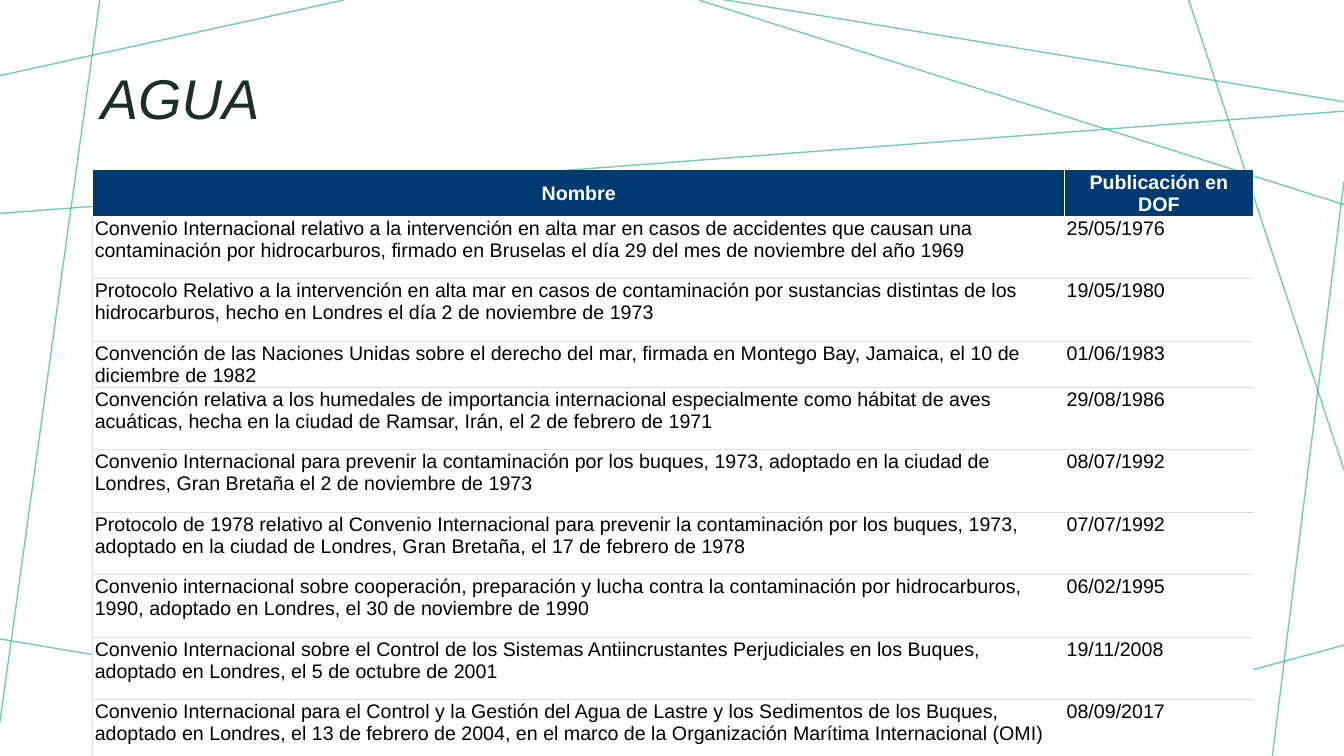
from lxml import etree
from pptx import Presentation
from pptx.dml.color import RGBColor
from pptx.enum.shapes import MSO_CONNECTOR
from pptx.enum.text import MSO_ANCHOR, MSO_AUTO_SIZE, PP_ALIGN
from pptx.oxml.ns import qn
from pptx.util import Inches, Pt

STRAIGHT = MSO_CONNECTOR.STRAIGHT
TOP, MIDDLE = MSO_ANCHOR.TOP, MSO_ANCHOR.MIDDLE
LEFT, CENTER = PP_ALIGN.LEFT, PP_ALIGN.CENTER
NO_AUTOFIT = MSO_AUTO_SIZE.NONE

GREEN, DARK_GREEN, NAVY = "37B598", "1B302B", "003A70"
WHITE, BLACK, GRAY = "FFFFFF", "000000", "DDDDDD"

BACKGROUND_LINES = [
    (3.41, 0, 0, 0.75),
    (0.99, 0, 0, 7.16),
    (6.83, 7.5, -0.05, 6.33),
    (13.33, 6.4, 9.26, 7.5),
    (13.33, 1.8, 12.62, 7.5),
    (13.33, 4.66, 11.79, 0),
    (13.33, 1.01, 7.14, -0.01),
    (6.93, 0, 13.33, 2.03),
    (-0.03, 2.12, 13.36, 1.1),
]

TREATIES = [
    ("Nombre", "Publicación en DOF"),
    ("Convenio Internacional relativo a la intervención en alta mar en casos de accidentes que causan una "
     "contaminación por hidrocarburos, firmado en Bruselas el día 29 del mes de noviembre del año 1969",
     "25/05/1976"),
    ("Protocolo Relativo a la intervención en alta mar en casos de contaminación por sustancias distintas de los "
     "hidrocarburos, hecho en Londres el día 2 de noviembre de 1973",
     "19/05/1980"),
    ("Convención de las Naciones Unidas sobre el derecho del mar, firmada en Montego Bay, Jamaica, el 10 de "
     "diciembre de 1982",
     "01/06/1983"),
    ("Convención relativa a los humedales de importancia internacional especialmente como hábitat de aves "
     "acuáticas, hecha en la ciudad de Ramsar, Irán, el 2 de febrero de 1971",
     "29/08/1986"),
    ("Convenio Internacional para prevenir la contaminación por los buques, 1973, adoptado en la ciudad de "
     "Londres, Gran Bretaña el 2 de noviembre de 1973",
     "08/07/1992"),
    ("Protocolo de 1978 relativo al Convenio Internacional para prevenir la contaminación por los buques, 1973, "
     "adoptado en la ciudad de Londres, Gran Bretaña, el 17 de febrero de 1978",
     "07/07/1992"),
    ("Convenio internacional sobre cooperación, preparación y lucha contra la contaminación por hidrocarburos, "
     "1990, adoptado en Londres, el 30 de noviembre de 1990",
     "06/02/1995"),
    ("Convenio Internacional sobre el Control de los Sistemas Antiincrustantes Perjudiciales en los Buques, "
     "adoptado en Londres, el 5 de octubre de 2001",
     "19/11/2008"),
    ("Convenio Internacional para el Control y la Gestión del Agua de Lastre y los Sedimentos de los Buques, "
     "adoptado en Londres, el 13 de febrero de 2004, en el marco de la Organización Marítima Internacional (OMI)",
     "08/09/2017"),
]
SHORT_ROWS = (0, 3)


def rgb(value):
    return RGBColor.from_string(value)


def set_borders(cell, colors):
    properties = cell._tc.get_or_add_tcPr()
    for side in ("L", "R", "T", "B"):
        border = etree.SubElement(properties, qn(f"a:ln{side}"), w=str(Pt(0.75)))
        if side in colors:
            fill = etree.SubElement(border, qn("a:solidFill"))
            etree.SubElement(fill, qn("a:srgbClr"), val=colors[side])
        else:
            etree.SubElement(border, qn("a:noFill"))


presentation = Presentation()
presentation.slide_width = Inches(13.33)
presentation.slide_height = Inches(7.5)
slide = presentation.slides.add_slide(presentation.slide_layouts[5])
slide.background.fill.solid()
slide.background.fill.fore_color.rgb = rgb(WHITE)

title = slide.shapes.title
title.left, title.top = Inches(0.9), Inches(0.46)
title.width, title.height = Inches(9.03), Inches(1.1)
title.text_frame.text = "AGUA"
title.text_frame.auto_size = NO_AUTOFIT
title.text_frame.vertical_anchor = MIDDLE
paragraph = title.text_frame.paragraphs[0]
paragraph.alignment = LEFT
paragraph.line_spacing = 0.9
font = paragraph.runs[0].font
font.name, font.size, font.italic = "Arial", Pt(40), True
font.color.rgb = rgb(DARK_GREEN)

for ends in BACKGROUND_LINES:
    connector = slide.shapes.add_connector(STRAIGHT, *[Inches(value) for value in ends])
    connector.line.width = Pt(1)
    connector.line.color.rgb = rgb(GREEN)
    color = connector.line._ln.find(".//" + qn("a:srgbClr"))
    etree.SubElement(color, qn("a:alpha"), val="70000")
    etree.SubElement(connector._element.spPr, qn("a:effectLst"))

table = slide.shapes.add_table(
    len(TREATIES), 2, Inches(0.92), Inches(1.69), Inches(11.51), Inches(5.64)
).table
table.horz_banding = False
table.columns[0].width = Inches(9.64)
table.columns[1].width = Inches(1.87)

for row_index, texts in enumerate(TREATIES):
    header = row_index == 0
    table.rows[row_index].height = Inches(0.34 if row_index in SHORT_ROWS else 0.62)
    for column_index, text in enumerate(texts):
        cell = table.cell(row_index, column_index)
        if header:
            borders = {"R": WHITE} if column_index == 0 else {"L": WHITE, "R": WHITE}
        else:
            borders = {"B": GRAY}
            if row_index > 1:
                borders["T"] = GRAY
            if column_index == 0:
                borders["L"] = GRAY
        set_borders(cell, borders)
        cell.fill.solid()
        cell.fill.fore_color.rgb = rgb(NAVY if header else WHITE)
        cell.margin_left = cell.margin_right = Inches(0.02)
        cell.margin_top = cell.margin_bottom = Inches(0.01)
        cell.vertical_anchor = MIDDLE if header else TOP
        cell.text_frame.text = text
        paragraph = cell.text_frame.paragraphs[0]
        paragraph.alignment = CENTER if header else LEFT
        font = paragraph.runs[0].font
        font.name, font.size, font.bold = "Arial", Pt(14), header
        font.color.rgb = rgb(WHITE if header else BLACK)

presentation.save("out.pptx")
